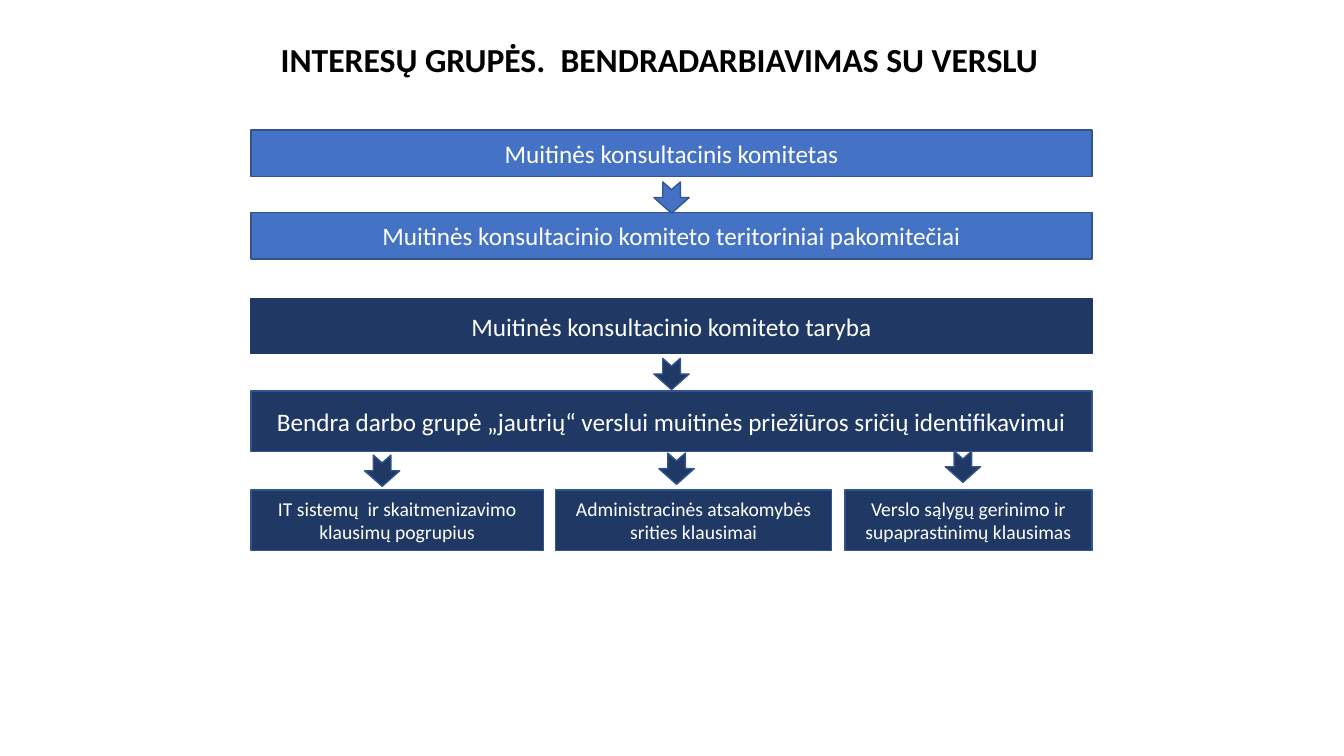
from pptx import Presentation
from pptx.dml.color import RGBColor
from pptx.enum.shapes import MSO_SHAPE
from pptx.enum.text import MSO_ANCHOR, MSO_AUTO_SIZE, PP_ALIGN
from pptx.util import Pt

PX = 9144
RECTANGLE = MSO_SHAPE.RECTANGLE
ARROW = MSO_SHAPE.NOTCHED_RIGHT_ARROW
CENTER = PP_ALIGN.CENTER
MIDDLE = MSO_ANCHOR.MIDDLE
NO_AUTOFIT = MSO_AUTO_SIZE.NONE

FONT = "Calibri"
BLACK = RGBColor(0x00, 0x00, 0x00)
WHITE = RGBColor(0xFF, 0xFF, 0xFF)
BLUE = RGBColor(0x44, 0x72, 0xC4)
NAVY = RGBColor(0x20, 0x38, 0x64)
OUTLINE = RGBColor(0x32, 0x54, 0x91)

ARROW_LENGTH, ARROW_WIDTH = 31, 35
SUBGROUP_TOP, SUBGROUP_HEIGHT = 190, 60

TITLE = "INTERESŲ GRUPĖS.  BENDRADARBIAVIMAS SU VERSLU"
COMMITTEES = [
    (0, 46, "Muitinės konsultacinis komitetas", OUTLINE),
    (82, 46, "Muitinės konsultacinio komiteto teritoriniai pakomitečiai", OUTLINE),
]
COUNCIL = [
    (0, 55, "Muitinės konsultacinio komiteto taryba", NAVY),
    (92, 60, "Bendra darbo grupė „jautrių“ verslui muitinės priežiūros sričių identifikavimui", OUTLINE),
]
SUBGROUPS = [
    (0, 290, "IT sistemų  ir skaitmenizavimo klausimų pogrupius"),
    (302, 274, "Administracinės atsakomybės srities klausimai"),
    (589, 245, "Verslo sąlygų gerinimo ir supaprastinimų klausimas"),
]
SUBGROUP_ARROWS = [(130, 171), (422, 169), (706, 167)]


def format_text(text_frame, text, size, color, bold=False):
    text_frame.word_wrap = True
    text_frame.vertical_anchor = MIDDLE
    paragraph = text_frame.paragraphs[0]
    paragraph.text = text
    paragraph.alignment = CENTER
    paragraph.font.name = FONT
    paragraph.font.size = Pt(size)
    paragraph.font.bold = bold
    paragraph.font.color.rgb = color
    return paragraph


def add_block(slide, kind, left, top, width, height, fill, outline=OUTLINE):
    shape = slide.shapes.add_shape(kind, *(round(value * PX) for value in (left, top, width, height)))
    shape.shadow.inherit = False
    shape.fill.solid()
    shape.fill.fore_color.rgb = fill
    shape.line.color.rgb = outline
    shape.line.width = Pt(1)
    return shape


def add_down_arrow(slide, center_x, center_y, fill):
    left = center_x - ARROW_LENGTH / 2
    top = center_y - ARROW_WIDTH / 2
    add_block(slide, ARROW, left, top, ARROW_LENGTH, ARROW_WIDTH, fill).rotation = 90


def add_title(slide, left, top, width, height):
    title = slide.shapes.title
    title.left, title.top, title.width, title.height = (value * PX for value in (left, top, width, height))
    title.text_frame.auto_size = NO_AUTOFIT
    format_text(title.text_frame, TITLE, 24, BLACK, bold=True).line_spacing = 0.9


def add_bar_pair(slide, left, top, width, bars, fill, arrow_offset):
    for offset, height, text, outline in bars:
        bar = add_block(slide, RECTANGLE, left, top + offset, width, height, fill, outline)
        format_text(bar.text_frame, text, 18, WHITE)
    add_down_arrow(slide, left + width / 2, top + arrow_offset, fill)


def add_subgroups(slide, left, top):
    for offset, width, text in SUBGROUPS:
        box = add_block(slide, RECTANGLE, left + offset, top + SUBGROUP_TOP, width, SUBGROUP_HEIGHT, NAVY)
        format_text(box.text_frame, text, 14, WHITE)
    for offset_x, offset_y in SUBGROUP_ARROWS:
        add_down_arrow(slide, left + offset_x, top + offset_y, NAVY)


def main():
    presentation = Presentation()
    presentation.slide_width = 1333 * PX
    presentation.slide_height = 750 * PX
    slide = presentation.slides.add_slide(presentation.slide_layouts[5])
    add_title(slide, 79, -11, 1150, 145)
    add_bar_pair(slide, 249, 129, 834, COMMITTEES, BLUE, 67)
    add_bar_pair(slide, 249, 296, 834, COUNCIL, NAVY, 75)
    add_subgroups(slide, 249, 296)
    presentation.save("out.pptx")


if __name__ == "__main__":
    main()
